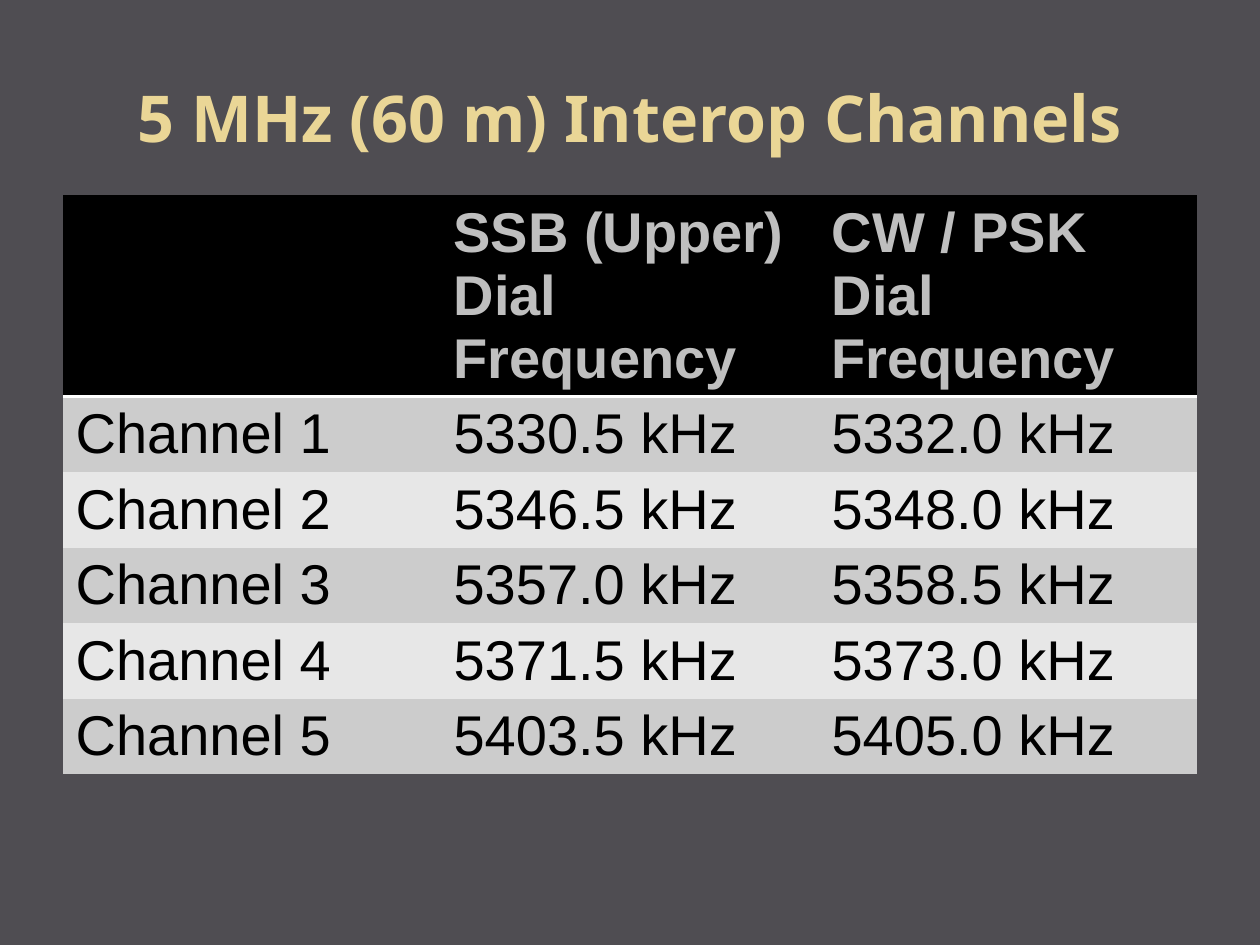
from typing import NamedTuple

from lxml import etree
from pptx import Presentation
from pptx.dml.color import RGBColor
from pptx.enum.text import MSO_ANCHOR, MSO_AUTO_SIZE, PP_ALIGN
from pptx.oxml.ns import qn
from pptx.util import Inches, Pt

MIDDLE = MSO_ANCHOR.MIDDLE
CENTER = PP_ALIGN.CENTER
NO_FIT = MSO_AUTO_SIZE.NONE

SLATE = RGBColor(0x4F, 0x4D, 0x52)
GOLD = RGBColor(0xEA, 0xD6, 0x96)
BLACK = RGBColor(0, 0, 0)
WHITE = RGBColor(0xFF, 0xFF, 0xFF)
SILVER = RGBColor(0xBF, 0xBF, 0xBF)
BANDS = (RGBColor(0xCC, 0xCC, 0xCC), RGBColor(0xE7, 0xE7, 0xE7))
PLAIN_STYLE = "{2D5ABB26-0587-4C30-8999-92F81FD0307C}"

LEFT, WIDTH = 0.5, 9
TABLE_TOP = 1.55
HEAD_H, ROW_H = 1.59, 0.6


class Channel(NamedTuple):
    name: str
    ssb: str
    cw: str


class Look(NamedTuple):
    fill: RGBColor
    ink: RGBColor
    bold: bool


HEADS = ("", "SSB (Upper) Dial Frequency", "CW / PSK Dial Frequency")
CHANNELS = (
    Channel("Channel 1", "5330.5 kHz", "5332.0 kHz"),
    Channel("Channel 2", "5346.5 kHz", "5348.0 kHz"),
    Channel("Channel 3", "5357.0 kHz", "5358.5 kHz"),
    Channel("Channel 4", "5371.5 kHz", "5373.0 kHz"),
    Channel("Channel 5", "5403.5 kHz", "5405.0 kHz"),
)


def style_font(font, name: str, size: float, ink: RGBColor, bold: bool) -> None:
    font.name = name
    font.size = Pt(size)
    font.bold = bold
    font.color.rgb = ink


def add_title(slide, text: str) -> None:
    title = slide.shapes.title
    title.left, title.top = Inches(LEFT), Inches(0.3)
    title.width, title.height = Inches(WIDTH), Inches(1.25)
    frame = title.text_frame
    frame.text = text
    frame.word_wrap = True
    frame.auto_size = NO_FIT
    frame.vertical_anchor = MIDDLE
    para = frame.paragraphs[0]
    para.alignment = CENTER
    style_font(para.runs[0].font, "Noto Sans", 36.9, GOLD, True)


def fill_row(table, row: int, texts: tuple[str, ...], look: Look) -> None:
    for col, text in enumerate(texts):
        cell = table.cell(row, col)
        cell.text = text
        cell.fill.solid()
        cell.fill.fore_color.rgb = look.fill
        for run in cell.text_frame.paragraphs[0].runs:
            style_font(run.font, "Arial", 32, look.ink, look.bold)


def rule_below(cell, color: RGBColor, width: float) -> None:
    """Draw a border along the bottom of a cell."""
    line = etree.Element(qn("a:lnB"), w=str(Pt(width)))
    fill = etree.SubElement(line, qn("a:solidFill"))
    etree.SubElement(fill, qn("a:srgbClr"), val=str(color))
    cell._tc.get_or_add_tcPr().insert(0, line)


def add_channels(slide) -> None:
    count = len(CHANNELS)
    frame = slide.shapes.add_table(
        count + 1, len(HEADS), Inches(LEFT), Inches(TABLE_TOP),
        Inches(WIDTH), Inches(HEAD_H + count * ROW_H))
    table = frame.table
    table._tbl.tblPr.find(qn("a:tableStyleId")).text = PLAIN_STYLE
    for row in table.rows:
        row.height = Inches(ROW_H)
    table.rows[0].height = Inches(HEAD_H)

    fill_row(table, 0, HEADS, Look(BLACK, SILVER, True))
    for cell in table.rows[0].cells:
        rule_below(cell, WHITE, 2)
    for i, channel in enumerate(CHANNELS):
        fill_row(table, i + 1, channel, Look(BANDS[i % 2], BLACK, False))


def main() -> None:
    deck = Presentation()
    deck.slide_width, deck.slide_height = Inches(10), Inches(7.5)
    slide = deck.slides.add_slide(deck.slide_layouts[5])
    back = slide.background.fill
    back.solid()
    back.fore_color.rgb = SLATE
    add_title(slide, "5 MHz (60 m) Interop Channels")
    add_channels(slide)
    deck.save("out.pptx")


if __name__ == "__main__":
    main()
